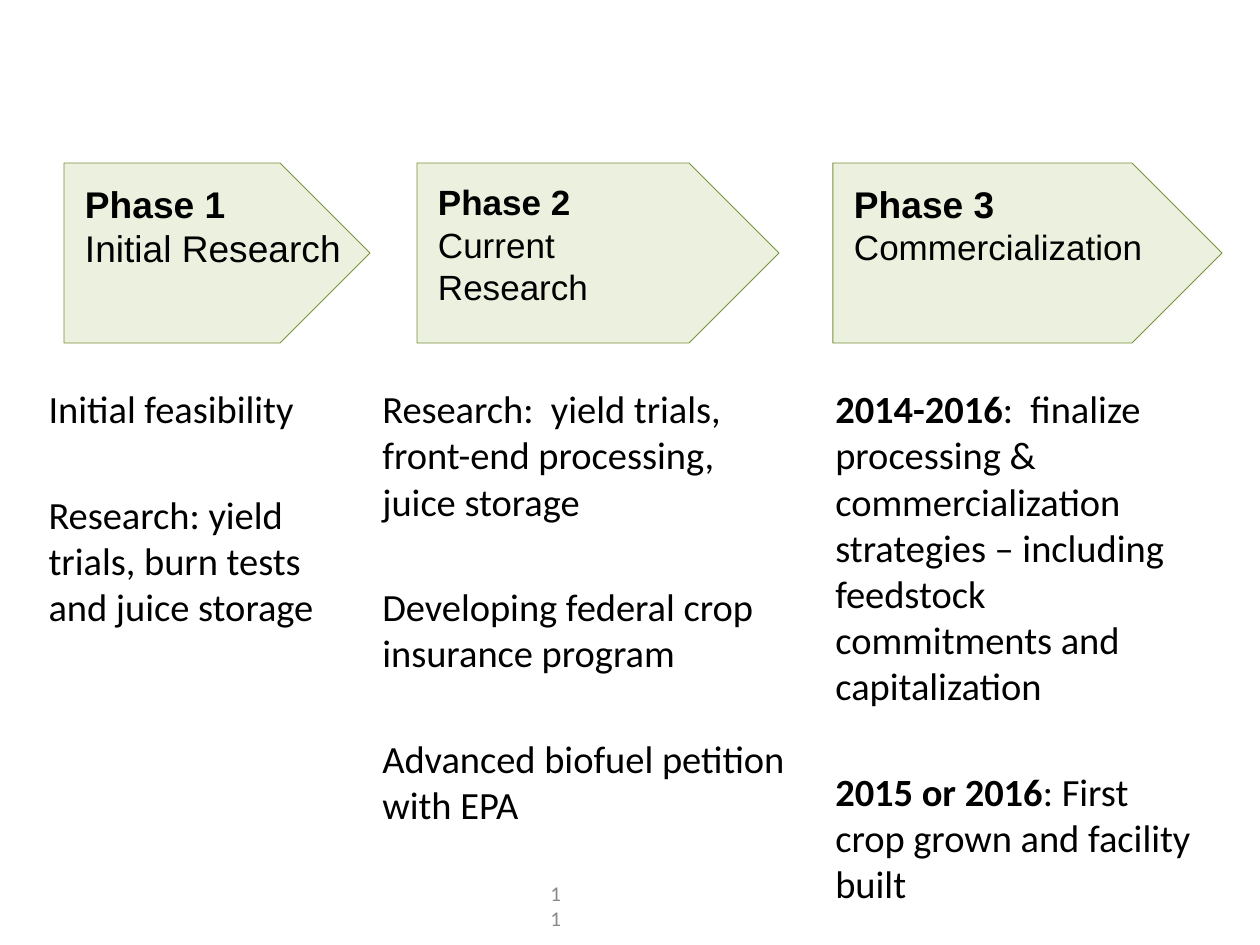
from lxml import etree
from pptx import Presentation
from pptx.dml.color import RGBColor
from pptx.enum.shapes import MSO_SHAPE
from pptx.enum.text import MSO_ANCHOR, MSO_AUTO_SIZE
from pptx.oxml.ns import qn
from pptx.util import Emu, Pt

PENTAGON = MSO_SHAPE.PENTAGON
MIDDLE = MSO_ANCHOR.MIDDLE
NO_AUTOFIT = MSO_AUTO_SIZE.NONE
COLORS = {"text": "000000", "fill": "EBF1DE", "outline": "77933C", "number": "898989"}
HEADING_TOP, HEADING_HEIGHT = 163, 180
DETAILS_TOP = 379

PHASES = [
    {
        "heading": (64, 306, 287),
        "lines": [("Phase 1", 21.2), ("Initial Research", 21.2)],
        "details": (28, 343, 287),
        "indent": 8,
        "items": [
            [("Initial feasibility", False)],
            [("Research: yield trials, burn tests and juice storage", False)],
        ],
    },
    {
        "heading": (417, 362, 287),
        "lines": [("Phase 2", 20), ("Current Research", 20)],
        "details": (370, 464, 436),
        "indent": 0,
        "items": [
            [("Research:  yield trials,\vfront-end processing,\vjuice storage", False)],
            [("Developing federal crop insurance program", False)],
            [("Advanced biofuel petition with EPA", False)],
        ],
    },
    {
        "heading": (833, 389, 338),
        "lines": [("Phase 3", 21.2), ("Commercialization", 20)],
        "details": (815, 389, 436),
        "indent": 8,
        "items": [
            [
                ("2014-2016", True),
                (":  finalize processing & commercialization strategies – including "
                 "feedstock commitments and capitalization", False),
            ],
            [("2015 or 2016", True), (": First crop grown and facility built", False)],
        ],
    },
]


def px(length):
    """Turn px, at 126 to the inch, into EMU."""
    return Emu(round(length * 914400 / 126))


def color(name):
    """Look up a colour by its role."""
    return RGBColor.from_string(COLORS[name])


def set_font(font, face, size, role="text"):
    """Set typeface, size and colour."""
    font.name, font.size = face, Pt(size)
    font.color.rgb = color(role)


def paragraph_at(frame, index):
    """Return the first paragraph of a frame, or a new one after it."""
    return frame.add_paragraph() if index else frame.paragraphs[0]


def add_text_box(slide, box):
    """Add a wrapping text box in the given px box."""
    text_box = slide.shapes.add_textbox(*map(px, box))
    text_box.text_frame.word_wrap = True
    return text_box


def add_heading(slide, box, label_width, lines):
    """Draw a phase arrow with its two-line label."""
    left, top, _, _ = box
    arrow = slide.shapes.add_shape(PENTAGON, *map(px, box))
    arrow.shadow.inherit = False
    arrow.fill.solid()
    arrow.fill.fore_color.rgb = color("fill")
    arrow.line.color.rgb = color("outline")
    arrow.line.width = Pt(0.5)

    label = add_text_box(slide, (left + 10, top + 13, label_width, 100)).text_frame
    label.margin_left = label.margin_right = px(11)
    label.margin_top = label.margin_bottom = px(5)
    for index, (line, size) in enumerate(lines):
        paragraph = paragraph_at(label, index)
        paragraph.text = line
        set_font(paragraph.font, "Arial", size)
        paragraph.font.bold = index == 0


def fill_details(holder, box, indent, items):
    """Place a phase's details in a box and write its items without bullets."""
    holder.left, holder.top, holder.width, holder.height = map(px, box)
    frame = holder.text_frame
    frame.word_wrap = True
    frame.auto_size = NO_AUTOFIT
    for index, runs in enumerate(items):
        paragraph = paragraph_at(frame, index)
        properties = paragraph._p.get_or_add_pPr()
        properties.set("marL", str(px(indent)))
        properties.set("indent", "0")
        etree.SubElement(properties, qn("a:buNone"))
        paragraph.space_before = Pt(34 if index else 0)
        set_font(paragraph.font, "Calibri", 22)
        for text, bold in runs:
            if "\v" in text:
                first, *rest = text.split("\v")
                paragraph.add_run().text = first
                for line in rest:
                    paragraph.add_line_break()
                    paragraph.add_run().text = line
            else:
                run = paragraph.add_run()
                run.text = text
                run.font.bold = bold


def add_page_number(slide, box, number):
    """Write the page number in a narrow box."""
    frame = add_text_box(slide, box).text_frame
    frame.vertical_anchor = MIDDLE
    paragraph = frame.paragraphs[0]
    paragraph.text = number
    set_font(paragraph.font, "Calibri", 12, "number")


def build_phases_slide(deck):
    """Build the slide of three phases."""
    slide = deck.slides.add_slide(deck.slide_layouts[1])
    title = slide.shapes.title
    title.element.getparent().remove(title.element)
    body = slide.placeholders[1]
    for index, phase in enumerate(PHASES):
        left, width, label_width = phase["heading"]
        heading_box = (left, HEADING_TOP, width, HEADING_HEIGHT)
        add_heading(slide, heading_box, label_width, phase["lines"])
        left, width, height = phase["details"]
        details_box = (left, DETAILS_TOP, width, height)
        holder = add_text_box(slide, details_box) if index else body
        fill_details(holder, details_box, phase["indent"], phase["items"])
    add_page_number(slide, (538, 881, 44, 50), "11")


def main():
    """Create and save the deck."""
    deck = Presentation()
    deck.slide_width, deck.slide_height = px(1260), px(945)
    build_phases_slide(deck)
    deck.save("out.pptx")


if __name__ == "__main__":
    main()
